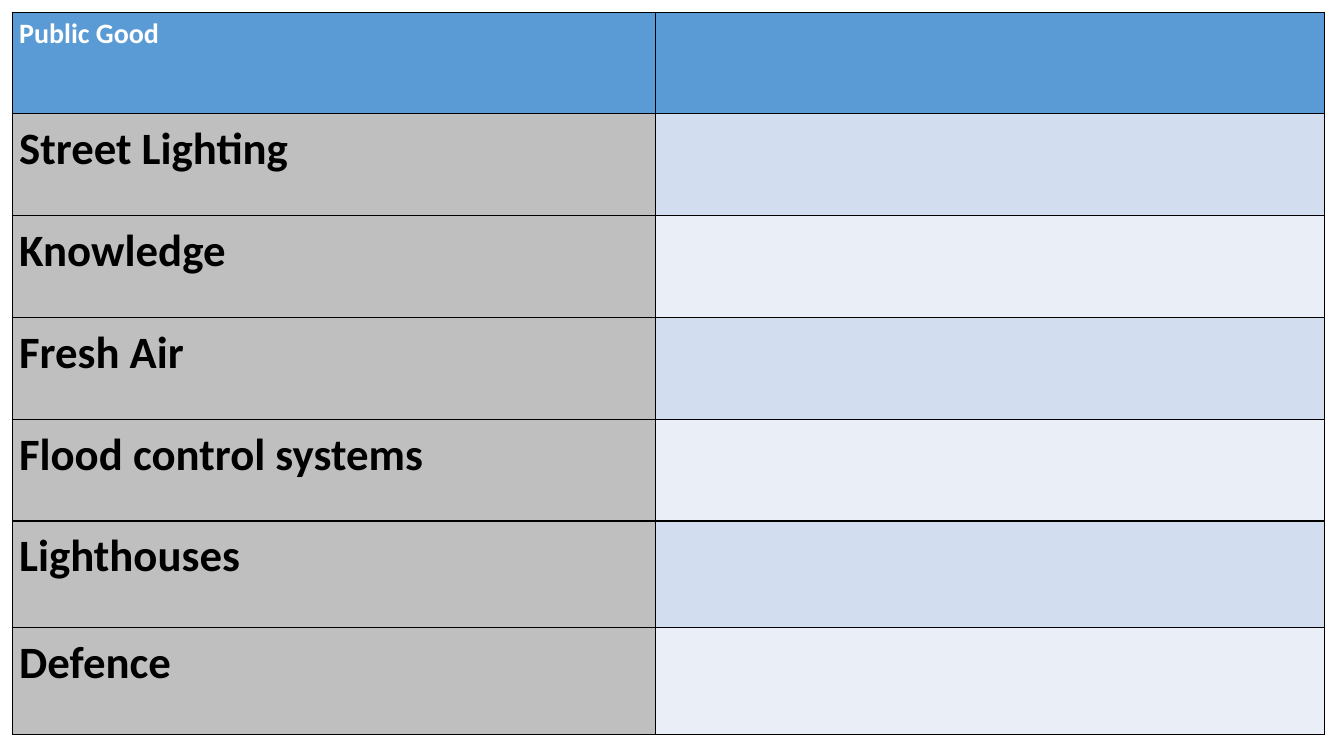
from lxml.etree import fromstring
from pptx import Presentation
from pptx.dml.color import RGBColor
from pptx.oxml.ns import nsdecls
from pptx.util import Inches, Pt

COLORS = {
    "head": "5B9BD5", "good": "BFBFBF", "odd": "D2DEEF", "even": "EAEFF7",
    "white": "FFFFFF", "black": "000000",
}
GOODS = ["Street Lighting", "Knowledge", "Fresh Air",
         "Flood control systems", "Lighthouses", "Defence"]
WIDTHS = [6.38, 6.64]
HEIGHTS = [1.01] * 5 + [1.06] * 2


def write(cell, text, size=32, color="black"):
    para = cell.text_frame.paragraphs[0]
    para.line_spacing = 1.15
    run = para.add_run()
    run.text = text
    run.font.name = "Calibri"
    run.font.size = Pt(size)
    run.font.bold = True
    run.font.color.rgb = RGBColor.from_string(COLORS[color])


def style(cell, fill):
    """Set the margins, fill and thin black borders of a cell."""
    cell.margin_left = cell.margin_right = Inches(0.07)
    cell.margin_top = cell.margin_bottom = 0
    cell.fill.solid()
    cell.fill.fore_color.rgb = RGBColor.from_string(COLORS[fill])
    props = cell._tc.get_or_add_tcPr()
    for spot, side in enumerate("LRTB"):
        props.insert(spot, fromstring(
            f'<a:ln{side} {nsdecls("a")} w="{Pt(1)}"><a:solidFill>'
            f'<a:srgbClr val="{COLORS["black"]}"/></a:solidFill></a:ln{side}>'))


deck = Presentation()
deck.slide_width = Inches(13.33)
deck.slide_height = Inches(7.5)
slide = deck.slides.add_slide(deck.slide_layouts[6])

frame = slide.shapes.add_table(
    len(HEIGHTS), len(WIDTHS), Inches(0.12), Inches(0.12),
    Inches(sum(WIDTHS)), Inches(sum(HEIGHTS)))
table = frame.table
for col, width in zip(table.columns, WIDTHS):
    col.width = Inches(width)
for row, height in zip(table.rows, HEIGHTS):
    row.height = Inches(height)

for cell in table.rows[0].cells:
    style(cell, "head")
write(table.cell(0, 0), "Public Good", size=20, color="white")

for num, good in enumerate(GOODS, 1):
    style(table.cell(num, 0), "good")
    style(table.cell(num, 1), "odd" if num % 2 else "even")
    write(table.cell(num, 0), good)

deck.save("out.pptx")
